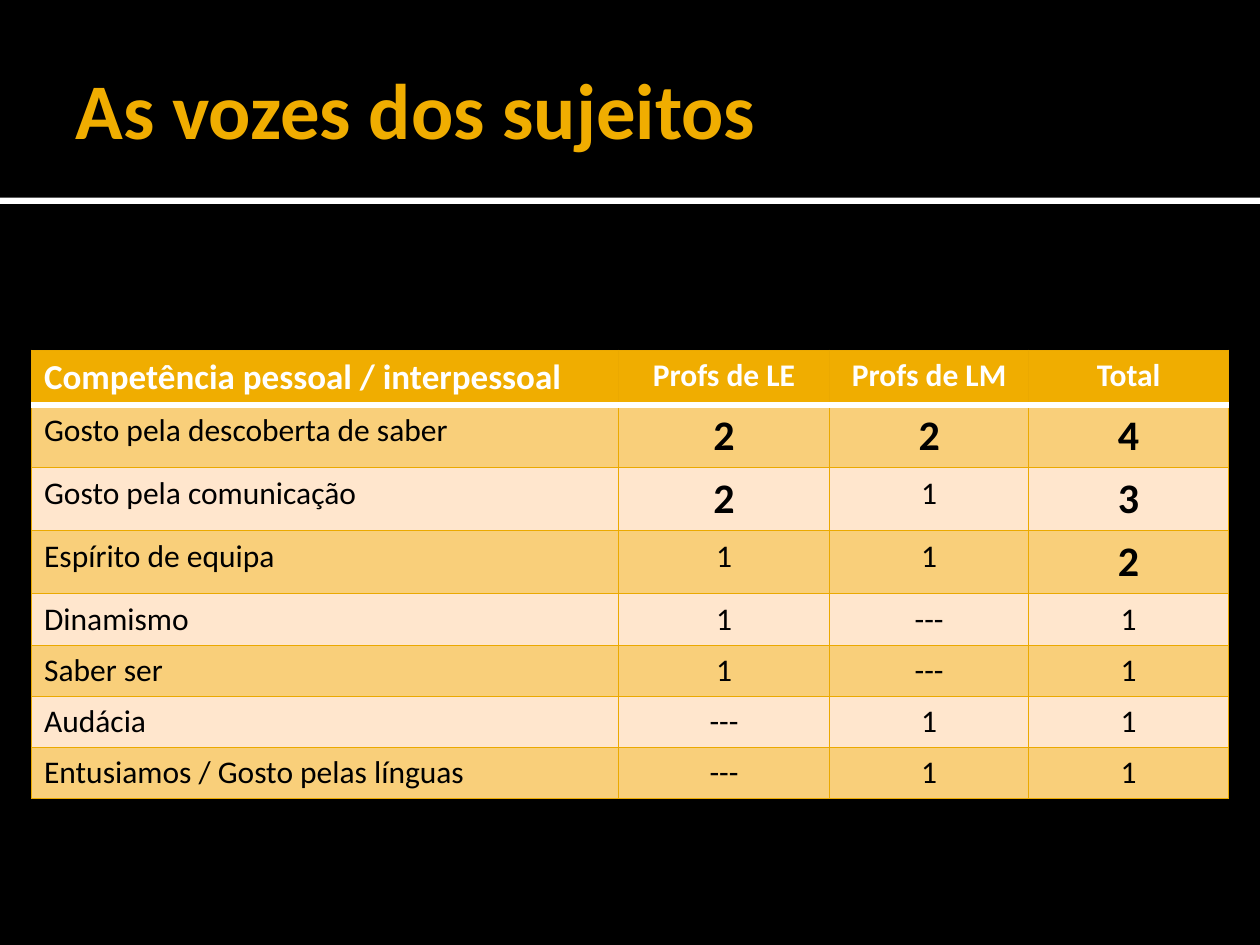
"""Builds the slide with the table of personal and interpersonal competences."""
from dataclasses import dataclass
from typing import NamedTuple

from lxml import etree
from pptx import Presentation
from pptx import util as u
from pptx.dml.color import RGBColor
from pptx.enum import shapes, text
from pptx.oxml import ns


@dataclass(frozen=True)
class Theme:
    font: str = "Calibri"
    background: str = "000000"
    accent: str = "F0AD00"
    grid: str = "EBA900"
    light: str = "FFFFFF"
    dark: str = "000000"
    bands: tuple[str, str] = ("F9CF7A", "FFE6CD")
    title_size: float = 45
    heading_size: float = 20
    body_size: float = 18
    emphasis_size: float = 24
    grid_width: float = 0.5
    header_rule_width: float = 3.78


class TextStyle(NamedTuple):
    size: float
    color: str
    bold: bool


class Border(NamedTuple):
    color: str
    width: float


class Competence(NamedTuple):
    name: str
    foreign_teachers: str
    mother_tongue_teachers: str
    total: str


THEME = Theme()
COLUMN_WIDTHS = (335.5, 120.5, 114, 114)
ROW_HEIGHT = 29.2
HEADER = Competence("Competência pessoal / interpessoal", "Profs de LE", "Profs de LM", "Total")
COMPETENCES = (
    Competence("Gosto pela descoberta de saber", "2", "2", "4"),
    Competence("Gosto pela comunicação", "2", "1", "3"),
    Competence("Espírito de equipa", "1", "1", "2"),
    Competence("Dinamismo", "1", "---", "1"),
    Competence("Saber ser", "1", "---", "1"),
    Competence("Audácia", "---", "1", "1"),
    Competence("Entusiamos / Gosto pelas línguas", "---", "1", "1"),
)


def set_fill(target, color: str) -> None:
    target.fill.solid()
    target.fill.fore_color.rgb = RGBColor.from_string(color)


def write_text(text_frame, content: str, style: TextStyle, centered: bool = False) -> None:
    text_frame.text = content
    paragraph = text_frame.paragraphs[0]
    paragraph.alignment = text.PP_ALIGN.CENTER if centered else text.PP_ALIGN.LEFT
    font = paragraph.runs[0].font
    font.name = THEME.font
    font.size = u.Pt(style.size)
    font.bold = style.bold
    font.color.rgb = RGBColor.from_string(style.color)


def set_borders(cell, top: Border, bottom: Border) -> None:
    side = Border(THEME.grid, THEME.grid_width)
    properties = cell._tc.get_or_add_tcPr()
    edges = {"a:lnL": side, "a:lnR": side, "a:lnT": top, "a:lnB": bottom}
    for position, (tag, border) in enumerate(edges.items()):
        line = etree.Element(ns.qn(tag), w=str(u.Pt(border.width)))
        fill = etree.SubElement(line, ns.qn("a:solidFill"))
        etree.SubElement(fill, ns.qn("a:srgbClr"), val=border.color)
        properties.insert(position, line)


def cell_style(row: int, column: int, value: str) -> TextStyle:
    if row == 0:
        size = THEME.body_size if column else THEME.heading_size
        return TextStyle(size, THEME.light, True)
    if value.isdigit() and int(value) > 1:
        return TextStyle(THEME.emphasis_size, THEME.dark, True)
    return TextStyle(THEME.body_size, THEME.dark, False)


def add_title(slide, content: str) -> None:
    box = slide.shapes.add_textbox(u.Pt(36), u.Pt(12.5), u.Pt(648), u.Pt(98.5))
    frame = box.text_frame
    frame.word_wrap = True
    frame.vertical_anchor = text.MSO_ANCHOR.MIDDLE
    frame.margin_left = u.Pt(7.2)
    frame.margin_right = frame.margin_top = frame.margin_bottom = u.Pt(3.6)
    write_text(frame, content, TextStyle(THEME.title_size, THEME.accent, True))


def add_title_rule(slide) -> None:
    rule = slide.shapes.add_shape(
        shapes.MSO_SHAPE.RECTANGLE, u.Pt(0), u.Pt(113), u.Pt(720), u.Pt(3.6)
    )
    rule.shadow.inherit = False
    set_fill(rule, THEME.light)
    rule.line.fill.background()


def add_competence_table(slide) -> None:
    rows = (HEADER, *COMPETENCES)
    table = slide.shapes.add_table(
        len(rows), len(COLUMN_WIDTHS), u.Pt(18), u.Pt(200),
        u.Pt(sum(COLUMN_WIDTHS)), u.Pt(ROW_HEIGHT * len(rows)),
    ).table
    table.horz_banding = False
    for column, width in zip(table.columns, COLUMN_WIDTHS):
        column.width = u.Pt(width)
    grid = Border(THEME.grid, THEME.grid_width)
    header_rule = Border(THEME.light, THEME.header_rule_width)
    for row, values in enumerate(rows):
        for column, value in enumerate(values):
            cell = table.cell(row, column)
            write_text(cell.text_frame, value, cell_style(row, column, value), column > 0)
            set_fill(cell, THEME.bands[(row - 1) % 2] if row else THEME.accent)
            set_borders(
                cell,
                top=header_rule if row == 1 else grid,
                bottom=header_rule if row == 0 else grid,
            )


def main() -> None:
    presentation = Presentation()
    presentation.slide_width = u.Pt(720)
    presentation.slide_height = u.Pt(540)
    slide = presentation.slides.add_slide(presentation.slide_layouts[6])
    set_fill(slide.background, THEME.background)
    add_title_rule(slide)
    add_title(slide, "As vozes dos sujeitos")
    add_competence_table(slide)
    presentation.save("out.pptx")


if __name__ == "__main__":
    main()
